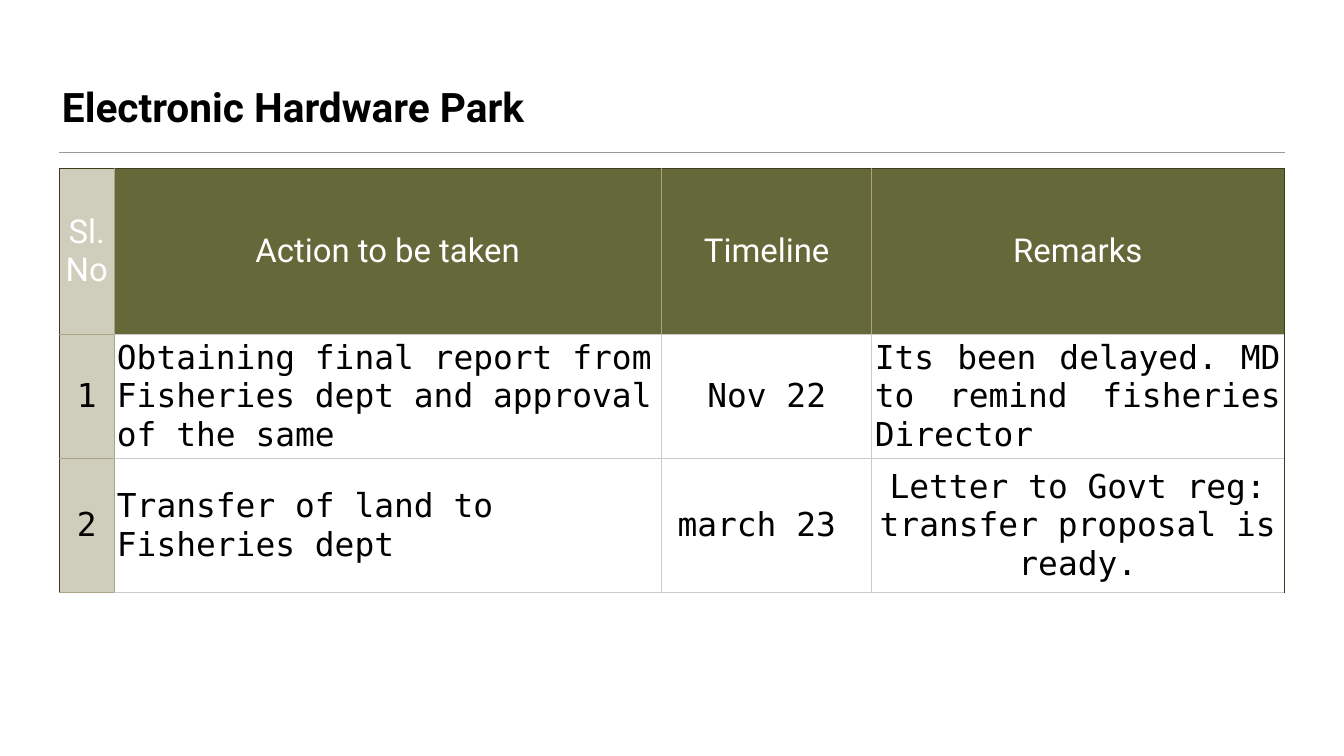
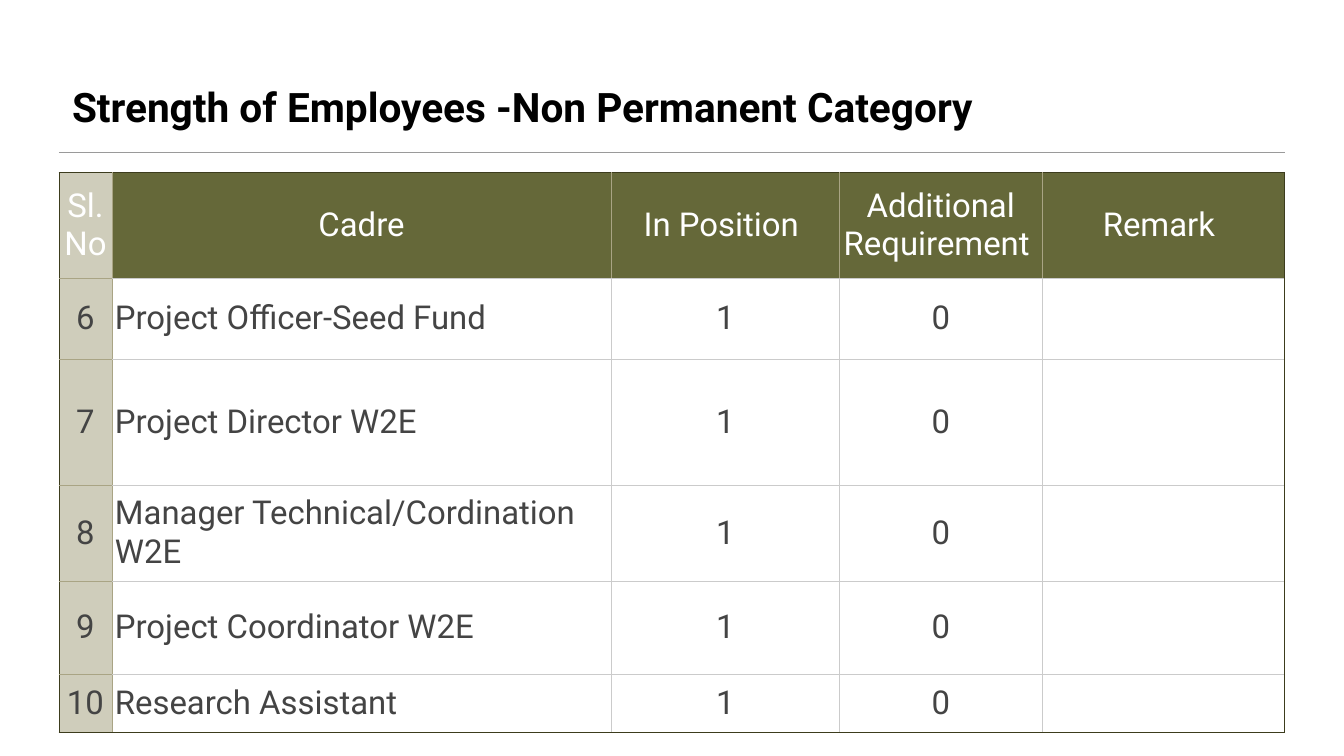
from lxml import etree
from pptx import Presentation
from pptx.dml.color import RGBColor
from pptx.enum.shapes import MSO_CONNECTOR
from pptx.enum.text import MSO_ANCHOR, PP_ALIGN
from pptx.oxml.ns import qn
from pptx.util import Inches, Pt

LEFT, MID, JUST = PP_ALIGN.LEFT, PP_ALIGN.CENTER, PP_ALIGN.JUSTIFY
CENTER, BOTTOM = MSO_ANCHOR.MIDDLE, MSO_ANCHOR.BOTTOM
LINE = MSO_CONNECTOR.STRAIGHT

COLORS = {
    "black": "000000", "white": "FFFFFF", "text": "444444",
    "olive": "656839", "sand": "CFCDBB",
    "rule": "9A9A9A", "grid": "CBCBCB", "tan": "A9A484", "edge": "3C3C1D",
}
SANS, MONO = "Roboto", "DejaVu Sans Mono"
PAD = Inches(0.06)


def color(name):
    return RGBColor.from_string(COLORS[name])


class Deck:
    def __init__(self):
        self.prs = Presentation()
        self.prs.slide_width = Inches(26.67)
        self.prs.slide_height = Inches(15)
        self.slide = None

    def page(self):
        """Start a white slide with the rule below its title."""
        self.slide = self.prs.slides.add_slide(self.prs.slide_layouts[6])
        fill = self.slide.background.fill
        fill.solid()
        fill.fore_color.rgb = color("white")
        line = self.slide.shapes.add_connector(
            LINE, Inches(1.17), Inches(3.03), Inches(25.5), Inches(3.03))
        line.line.color.rgb = color("rule")
        line.line.width = Pt(1)
        etree.SubElement(line._element.spPr, qn("a:effectLst"))

    def add_text(self, para, text, size, font, tint, bold=False):
        run = para.add_run()
        run.text = text
        run.font.size = Pt(size)
        run.font.name = font
        run.font.bold = bold
        run.font.color.rgb = color(tint)

    def title(self, text, box, anchor, wrap=True):
        frame = self.slide.shapes.add_textbox(*map(Inches, box)).text_frame
        frame.word_wrap = wrap
        frame.vertical_anchor = anchor
        frame.margin_left = frame.margin_right = PAD
        frame.margin_top = frame.margin_bottom = PAD
        self.add_text(frame.paragraphs[0], text, 58, SANS, "black", True)

    def border(self, cell, sides):
        props = cell._tc.get_or_add_tcPr()
        for spot, (side, tint) in enumerate(zip("LRTB", sides)):
            line = etree.Element(qn(f"a:ln{side}"), w=str(Pt(1)))
            fill = etree.SubElement(line, qn("a:solidFill"))
            etree.SubElement(fill, qn("a:srgbClr"), val=COLORS[tint])
            props.insert(spot, line)

    def cell(self, cell, text, align, font, tint, back):
        cell.vertical_anchor = CENTER
        cell.margin_left = cell.margin_right = PAD
        cell.margin_top = cell.margin_bottom = PAD
        if back:
            cell.fill.solid()
            cell.fill.fore_color.rgb = color(back)
        else:
            cell.fill.background()
        if text:
            para = cell.text_frame.paragraphs[0]
            para.alignment = align
            self.add_text(para, text, 47, font, tint)

    def table(self, spot, cols, highs, rows, font, tint, just=(), closed=False):
        """Draw a table; just lists justified cells, closed darkens its foot."""
        size = sum(cols), sum(highs)
        table = self.slide.shapes.add_table(
            len(rows), len(cols), *map(Inches, (*spot, *size))).table
        table.first_row = table.horz_banding = False
        for col, width in zip(table.columns, cols):
            col.width = Inches(width)
        for row, high in zip(table.rows, highs):
            row.height = Inches(high)
        last_row, last_col = len(rows) - 1, len(cols) - 1
        for r, row in enumerate(rows):
            for c, text in enumerate(row):
                head, index = r == 0, c == 0
                align = LEFT if c == 1 and not head else MID
                if (r, c) in just:
                    align = JUST
                back = "sand" if index else "olive" if head else None
                cell = table.cell(r, c)
                self.cell(cell, text, align, SANS if head else font,
                          "white" if head else tint, back)
                inner = "tan" if head or index else "grid"
                left = "edge" if index else "tan" if head or c == 1 else "grid"
                right = "edge" if c == last_col else inner
                top = "edge" if head else "tan" if index else "grid"
                foot = "tan" if index else "grid"
                if closed and r == last_row:
                    foot = "edge"
                self.border(cell, (left, right, top, foot))


def main():
    deck = Deck()

    deck.page()
    deck.title("Electronic Hardware Park", (1.17, 0.51, 24.32, 2.15), BOTTOM)
    deck.table(
        (1.18, 3.34), (1.08, 10.87, 4.17, 8.18), (3.29, 2.31, 2.65),
        [("Sl. No", "Action to be taken", "Timeline", "Remarks"),
         ("1", "Obtaining final report from Fisheries dept and approval "
               "of the same", "Nov 22",
          "Its been delayed. MD to remind fisheries Director"),
         ("2", "Transfer of land to Fisheries dept", "march 23 ",
          "Letter to Govt reg: transfer proposal is ready.")],
        MONO, "black", just=[(1, 3)])

    deck.page()
    staff = ["Project Officer-Seed Fund", "Project Director W2E",
             "Manager Technical/Cordination W2E", "Project Coordinator W2E",
             "Research Assistant"]
    heads = ("Sl. No", "Cadre", "In Position ", "Additional Requirement ",
             "Remark ")
    deck.table(
        (1.17, 3.42), (1.05, 9.91, 4.53, 4.02, 4.8),
        (2.1, 1.6, 2.5, 1.91, 1.85, 1.15),
        [heads] + [(str(n), role, "1", "0", "")
                   for n, role in enumerate(staff, 6)],
        SANS, "text", closed=True)
    deck.title("Strength of Employees -Non Permanent Category",
               (1.37, 1.57, 19.37, 1.09), CENTER, wrap=False)

    deck.prs.save("out.pptx")


if __name__ == "__main__":
    main()
